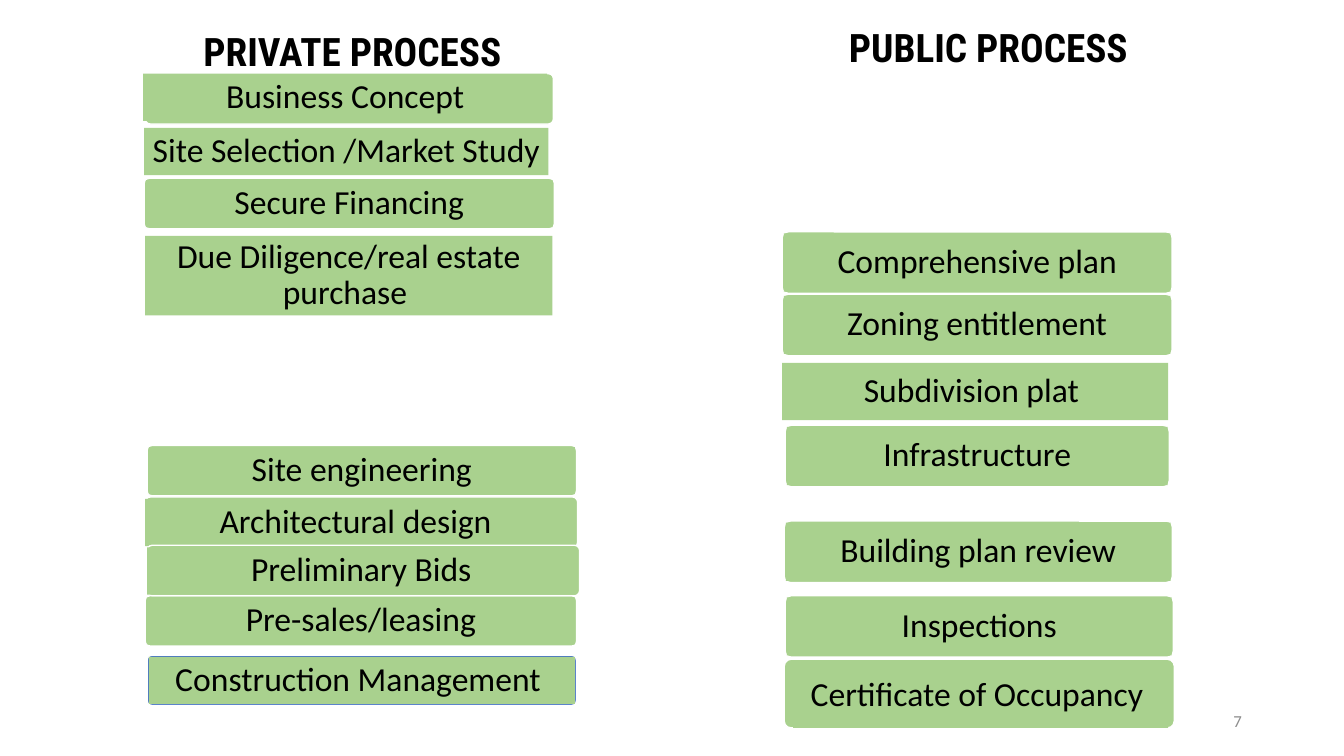
from dataclasses import dataclass

from pptx import Presentation
from pptx.dml.color import RGBColor
from pptx.enum.shapes import MSO_SHAPE
from pptx.enum.text import MSO_ANCHOR, MSO_AUTO_SIZE, PP_ALIGN
from pptx.util import Pt


@dataclass(frozen=True)
class Theme:
    heading_font: str = "Roboto Condensed"
    body_font: str = "Calibri"
    heading_size: float = 28
    step_size: float = 24
    number_size: float = 12
    ink: RGBColor = RGBColor(0x00, 0x00, 0x00)
    white: RGBColor = RGBColor(0xFF, 0xFF, 0xFF)
    green: RGBColor = RGBColor(0xA9, 0xD1, 0x8E)
    blue: RGBColor = RGBColor(0x44, 0x72, 0xC4)
    gray: RGBColor = RGBColor(0x8C, 0x8C, 0x8C)


class ProcessPage:
    def __init__(self, page, theme):
        self.page = page
        self.theme = theme

    def label(self, shape, text, font, size, color, align=PP_ALIGN.CENTER,
              bold=False, spacing=1.0, margins=(4.5, 3)):
        frame = shape.text_frame
        frame.word_wrap = True
        frame.auto_size = MSO_AUTO_SIZE.NONE
        frame.vertical_anchor = MSO_ANCHOR.MIDDLE
        frame.margin_left = frame.margin_right = Pt(margins[0])
        frame.margin_top = frame.margin_bottom = Pt(margins[1])
        para = frame.paragraphs[0]
        para.alignment = align
        para.line_spacing = spacing
        span = para.add_run()
        span.text = text
        span.font.name = font
        span.font.size = Pt(size)
        span.font.bold = bold
        span.font.color.rgb = color

    def heading(self, shape, text):
        theme = self.theme
        self.label(shape, text, theme.heading_font, theme.heading_size,
                   theme.ink, bold=True, margins=(8.4, 8.4))

    def title(self, text, box):
        shape = self.page.shapes.title
        shape.left, shape.top, shape.width, shape.height = map(Pt, box)
        self.heading(shape, text)

    def second_title(self, text, box):
        self.heading(self.page.shapes.add_textbox(*map(Pt, box)), text)

    def block(self, kind, box, fill):
        shape = self.page.shapes.add_shape(kind, *map(Pt, box))
        shape.shadow.inherit = False
        shape.fill.solid()
        shape.fill.fore_color.rgb = fill
        shape.line.fill.background()
        return shape

    def card(self, box, fill):
        shape = self.block(MSO_SHAPE.ROUNDED_RECTANGLE, box, fill)
        shape.adjustments[0] = 0.1
        shape.line.color.rgb = self.theme.white
        shape.line.width = Pt(1)

    def face(self, text, box):
        theme = self.theme
        shape = self.block(MSO_SHAPE.RECTANGLE, box, theme.green)
        self.label(shape, text, theme.body_font, theme.step_size, theme.ink,
                   spacing=0.9)

    def step(self, text, box, face=None, fill=None):
        self.card(box, fill or self.theme.green)
        left, top, width, height = box
        inset = 1.2
        self.face(text, face or (left + inset, top + inset,
                                 width - 2 * inset, height - 2 * inset))

    def number(self, text, box):
        theme = self.theme
        shape = self.page.shapes.add_textbox(*map(Pt, box))
        self.label(shape, text, theme.body_font, theme.number_size, theme.gray,
                   align=PP_ALIGN.RIGHT, margins=(7.2, 3.6))


def main():
    deck = Presentation()
    deck.slide_width, deck.slide_height = Pt(960), Pt(540)
    theme = Theme()
    process = ProcessPage(deck.slides.add_slide(deck.slide_layouts[5]), theme)

    process.title("PRIVATE PROCESS", (49.7, 0, 403.9, 72))
    process.second_title("PUBLIC PROCESS ", (505.4, 0, 407.5, 66.2))

    process.step("Business Concept", (103.7, 52.6, 291.6, 36),
                 face=(102.2, 52.6, 288.7, 33.8))
    process.face("Site Selection /Market Study", (103, 91.4, 288.7, 33.8))
    process.step("Secure Financing", (103, 127.4, 293, 36))
    process.face("Due Diligence/real estate purchase ",
                 (103.7, 168.5, 290.9, 56.9))
    process.step("Site engineering", (105.1, 318.2, 306.7, 36))
    process.step("Architectural design ", (103.7, 355, 308.9, 36),
                 face=(103.7, 356.4, 306, 33.8))
    process.step("Pre-sales/leasing", (103.7, 425.5, 308.2, 36))
    process.step("Preliminary Bids", (105.1, 389.5, 308.9, 36),
                 face=(105.1, 391, 306, 33.8))
    process.step("Construction Management ", (105.1, 468, 306.7, 36),
                 fill=theme.blue)

    process.step("Comprehensive plan", (558.7, 165.6, 278.6, 43.9))
    process.step("Zoning entitlement", (558.7, 210.2, 278.6, 43.9))
    process.face("Subdivision plat ", (558.7, 259.2, 275.8, 41))
    process.step("Infrastructure", (560.9, 303.8, 274.3, 43.9))
    process.step("Building plan review", (560.2, 372.2, 277.2, 43.9))
    process.step("Inspections", (560.9, 425.5, 277.2, 43.9))
    process.step("Certificate of Occupancy ", (560.2, 470.9, 278.6, 49),
                 face=(566.6, 473.8, 267.8, 46.1))
    process.number("7", (678.2, 500.4, 216, 28.8))

    deck.save("out.pptx")


if __name__ == "__main__":
    main()
